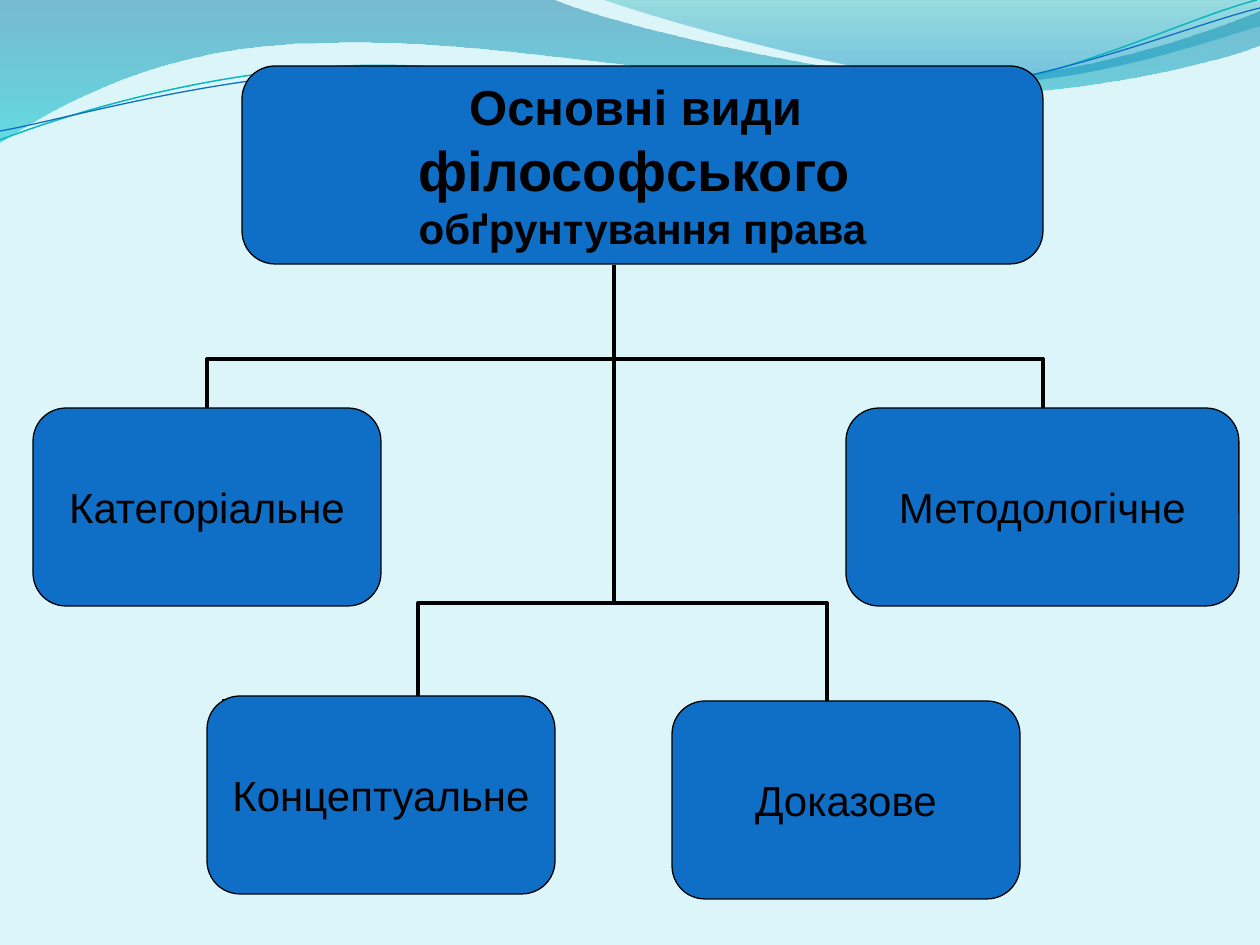
from lxml import etree
from pptx import Presentation
from pptx import util as u
from pptx.dml.color import RGBColor
from pptx.enum import shapes, text
from pptx.oxml import ns

PX = 914400 / 126
BLACK = RGBColor(0x00, 0x00, 0x00)
BLUE = RGBColor(0x0F, 0x6F, 0xC6)
PALE = RGBColor(0xDB, 0xF5, 0xF9)
TEAL_LINE = RGBColor(0x0A, 0xB8, 0xBF)
DEEP_BLUE = RGBColor(0x00, 0x74, 0xA1)
TURQUOISE = RGBColor(0x00, 0xC6, 0xCF)
SEA_GREEN = RGBColor(0x00, 0xA1, 0xA9)
SKY_BLUE = RGBColor(0x00, 0x8B, 0xBF)

deck = Presentation()
deck.slide_width, deck.slide_height = u.Emu(round(1260 * PX)), u.Emu(round(945 * PX))
page = deck.slides.add_slide(deck.slide_layouts[6])
page.background.fill.solid()
page.background.fill.fore_color.rgb = PALE


def add_curve(start, segments, closed):
    builder = page.shapes.build_freeform(*start, scale=PX)
    builder.add_line_segments([point for segment in segments for point in segment], close=closed)
    curve = builder.convert_to_shape()
    curve.shadow.inherit = False
    steps = iter(list(curve._element.spPr.iter(ns.qn("a:lnTo"))))
    for segment in segments:
        nodes = [next(steps) for _ in segment]
        if len(nodes) == 3:
            nodes[0].addprevious(bend := etree.Element(ns.qn("a:cubicBezTo")))
            for node in nodes:
                bend.append(node[0])
                node.getparent().remove(node)
    return curve


def add_text(frame, content, size=24, bold=False, first=False):
    para = frame.paragraphs[0] if first else frame.add_paragraph()
    para.alignment = text.PP_ALIGN.CENTER
    span = para.add_run()
    span.text = content
    span.font.name = "Arial"
    span.font.size = u.Pt(size)
    span.font.bold = bold
    span.font.color.rgb = BLACK


waves = [
    ((0, 0), [
        [(554, 0)],
        [(600, 21), (837, 79), (955, 79)],
        [(1075, 79), (1207, 33), (1260, 11)],
        [(1260, 45)],
        [(1239, 55), (1096, 96), (940, 95)],
        [(784, 95), (481, 35), (324, 43)],
        [(163, 44), (58, 105), (0, 142)],
    ], [(0, DEEP_BLUE, 45), (1, TURQUOISE, 55)]),
    ((604, 0), [
        [(641, 14), (859, 78), (969, 82)],
        [(1079, 87), (1211, 40), (1260, 26)],
        [(1260, 0)],
    ], [(0, SEA_GREEN, 30), (0.8, SKY_BLUE, 45)]),
]
for start, segments, stops in waves:
    wave = add_curve(start, segments, True)
    wave.line.fill.background()
    wave.fill.gradient()
    wave.fill.gradient_angle = 270
    for stop, (position, colour, opacity) in zip(wave.fill.gradient_stops, stops):
        stop.position = position
        stop.color.rgb = colour
    for node, (_, _, opacity) in zip(wave._element.spPr.iter(ns.qn("a:srgbClr")), stops):
        etree.SubElement(node, ns.qn("a:alpha")).set("val", str(opacity * 1000))

ripples = [
    ((0, 140), [
        [(60, 117), (199, 72), (349, 66)],
        [(498, 59), (747, 112), (898, 101)],
        [(1049, 89), (1182, 19), (1257, 0)],
    ], TEAL_LINE, 0.85),
    ((0, 131), [
        [(59, 121), (207, 77), (357, 71)],
        [(508, 64), (752, 105), (903, 95)],
        [(1053, 84), (1186, 26), (1260, 8)],
    ], BLUE, 0.75),
]
for start, segments, colour, width in ripples:
    ripple = add_curve(start, segments, False)
    ripple.fill.background()
    ripple.line.color.rgb = colour
    ripple.line.width = u.Pt(width)

TRUNK, UPPER, LOWER = 614, 359, 603
links = [
    ("line", (TRUNK, LOWER, TRUNK, 265), None),
    ("bentConnector2", (643, UPPER, 207, 408), None),
    ("bentConnector2", (TRUNK, UPPER, 1043, 408), None),
    ("bentConnector3", (222, 701, TRUNK, LOWER), 50000),
    ("bentConnector3", (829, 701, TRUNK, LOWER), 1100),
]
for preset, ends, bend_at in links:
    kind = shapes.MSO_CONNECTOR.STRAIGHT if preset == "line" else shapes.MSO_CONNECTOR.ELBOW
    connector = page.shapes.add_connector(kind, *(round(value * PX) for value in ends))
    connector.line.color.rgb = BLACK
    connector.line.width = u.Pt(2.25)
    properties = connector._element.spPr
    geometry = properties.find(ns.qn("a:prstGeom"))
    geometry.set("prst", preset)
    if bend_at:
        guide = etree.SubElement(geometry.find(ns.qn("a:avLst")), ns.qn("a:gd"))
        guide.set("name", "adj1")
        guide.set("fmla", f"val {bend_at}")
    etree.SubElement(properties, ns.qn("a:effectLst"))

BOX_HEIGHT = 198
title = [("Основні види ", 28, True), ("філософського ", 32, True), ("обґрунтування права", 24, True)]
boxes = [
    (242, 66, 801, title),
    (33, 408, 348, [("Категоріальне", 24, False)]),
    (207, 696, 348, [("Концептуальне", 24, False)]),
    (846, 408, 393, [("Методологічне", 24, False)]),
    (672, 701, 348, [("Доказове", 24, False)]),
]
for left, top, width, lines in boxes:
    area = (round(value * PX) for value in (left, top, width, BOX_HEIGHT))
    box = page.shapes.add_shape(shapes.MSO_SHAPE.ROUNDED_RECTANGLE, *area)
    box.shadow.inherit = False
    box.fill.solid()
    box.fill.fore_color.rgb = BLUE
    box.line.color.rgb = BLACK
    box.line.width = u.Pt(0.75)
    frame = box.text_frame
    frame.margin_left = frame.margin_right = frame.margin_top = frame.margin_bottom = 0
    frame.vertical_anchor = text.MSO_ANCHOR.MIDDLE
    frame.word_wrap = False
    for index, (content, size, bold) in enumerate(lines):
        add_text(frame, content, size=size, bold=bold, first=index == 0)

deck.save("out.pptx")
